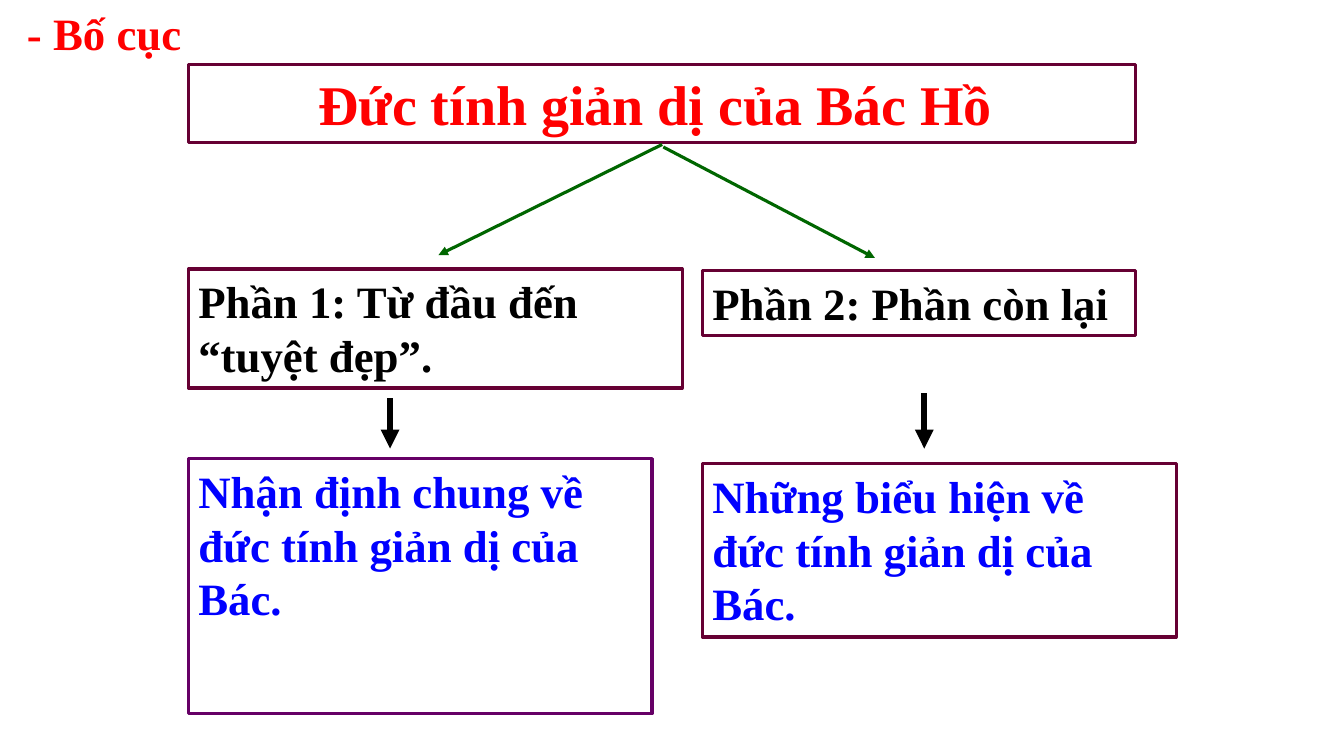
from lxml.etree import SubElement
from pptx import Presentation
from pptx.dml.color import RGBColor
from pptx.enum.shapes import MSO_CONNECTOR as CONNECTOR, MSO_SHAPE as SHAPE
from pptx.enum.text import MSO_ANCHOR as ANCHOR, MSO_AUTO_SIZE as AUTO_SIZE, PP_ALIGN as ALIGN
from pptx.oxml.ns import qn
from pptx.util import Pt

FONT = "Times New Roman"
RED, BLUE, BLACK, GREEN = "FF0000", "0000FF", "000000", "006600"
MAROON, PURPLE = "660033", "660066"
LEFT, RIGHT = 134.6, 501.8  # left edges of the two columns

HEADING = ("- Bố cục", (12.2, 0.7, 180, 46))
TITLE = ("Đức tính giản dị của Bác Hồ ", (LEFT, 46, 676.8, 55.6))
# text, text colour, outline, (left, top, width, height)
PARTS = [
    ("Phần 1: Từ đầu đến “tuyệt đẹp”.", BLACK, MAROON, (LEFT, 192.2, 352.8, 85)),
    ("Nhận định chung về đức tính giản dị của Bác.", BLUE, PURPLE, (LEFT, 327.6, 331.2, 182.2)),
    ("Phần 2: Phần còn lại", BLACK, MAROON, (RIGHT, 193.4, 309.6, 46.2)),
    ("Những biểu hiện về đức tính giản dị của Bác.", BLUE, MAROON, (RIGHT, 331.2, 338.4, 123.8)),
]
# start, end, colour, line width
ARROWS = [
    ((473, 103.2), (313.2, 182.2), GREEN, 2.25),
    ((473.8, 105), (625, 184.3), GREEN, 2.25),
    ((278.6, 284.4), (278.6, 320.4), BLACK, 4.5),
    ((660.2, 280.8), (660.2, 320.4), BLACK, 4.5),
]


def color(value):
    return RGBColor.from_string(value)


def outline(shape, value, width=2.25):
    shape.line.color.rgb = color(value)
    shape.line.width = Pt(width)


def write(shape, text, value, size=32, align=ALIGN.LEFT):
    frame = shape.text_frame
    frame.word_wrap = True
    frame.auto_size = AUTO_SIZE.NONE
    frame.vertical_anchor = ANCHOR.TOP
    frame.margin_left = frame.margin_right = Pt(7.2)
    frame.margin_top = frame.margin_bottom = Pt(3.6)
    para = frame.paragraphs[0]
    para.alignment = align
    span = para.add_run()
    span.text = text
    span.font.name = FONT
    span.font.size = Pt(size)
    span.font.bold = True
    span.font.color.rgb = color(value)


def add_arrow(page, start, end, value, width):
    arrow = page.shapes.add_connector(CONNECTOR.STRAIGHT, *map(Pt, start + end))
    outline(arrow, value, width)
    SubElement(arrow.line._get_or_add_ln(), qn("a:tailEnd"), type="triangle")
    SubElement(arrow._element.spPr, qn("a:effectLst"))


def main():
    deck = Presentation()
    deck.slide_width, deck.slide_height = Pt(960), Pt(540)
    page = deck.slides.add_slide(deck.slide_layouts[5])

    text, place = TITLE
    title = page.shapes.title
    title.left, title.top, title.width, title.height = map(Pt, place)
    outline(title, MAROON)
    write(title, text, RED, 40, ALIGN.CENTER)

    text, place = HEADING
    write(page.shapes.add_textbox(*map(Pt, place)), text, RED)

    for text, ink, edge, place in PARTS:
        box = page.shapes.add_shape(SHAPE.RECTANGLE, *map(Pt, place))
        box.shadow.inherit = False
        box.fill.background()
        outline(box, edge)
        write(box, text, ink)

    for arrow in ARROWS:
        add_arrow(page, *arrow)

    deck.save("out.pptx")


if __name__ == "__main__":
    main()
